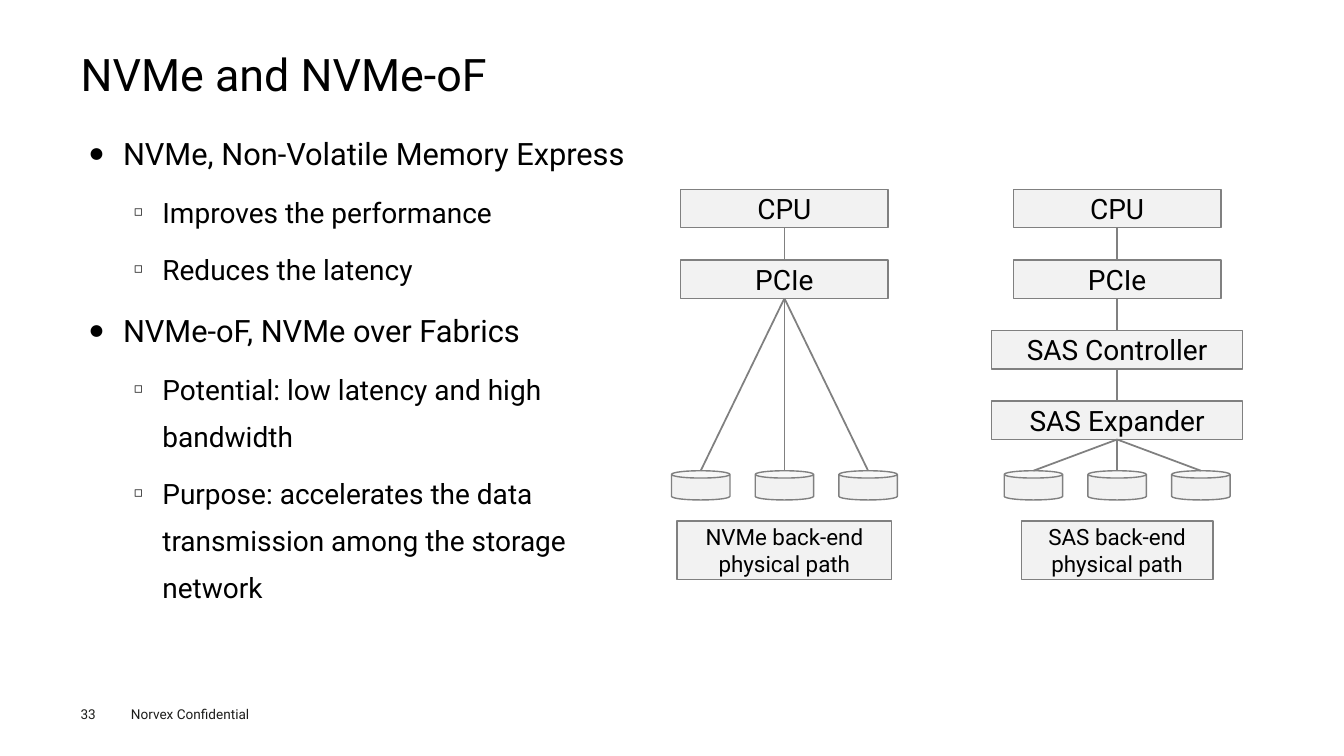
from dataclasses import dataclass

from lxml import etree
from pptx import Presentation
from pptx.dml.color import RGBColor
from pptx.enum import shapes, text
from pptx.oxml import ns
from pptx.util import Inches, Pt


@dataclass(frozen=True)
class Theme:
    font: str = "Roboto"
    ink: str = "000000"
    footer_ink: str = "1D1D1B"
    fill: str = "F2F2F2"
    outline: str = "808080"
    title: float = 32
    topic: float = 22
    detail: float = 20
    caption: float = 16
    footer: float = 9.7


THEME = Theme()
LAYER_TOP, LAYER_STEP, LAYER_HEIGHT = 1.88, 0.7, 0.38
DISK_TOP, DISK_WIDTH, DISK_HEIGHT, DISK_STEP = 4.67, 0.58, 0.29, 0.83
CAPTION_TOP, CAPTION_HEIGHT = 5.17, 0.58

# Per outline level: size, space before, left indent, hanging indent, bullet, alignment
LEVELS = [
    (THEME.topic, 7.9, 0.33, 0.33, "●", text.PP_ALIGN.JUSTIFY),
    (THEME.detail, 7.2, 0.72, 0.28, "◻", text.PP_ALIGN.LEFT),
]
OUTLINE = [
    (0, "NVMe, Non-Volatile Memory Express"),
    (1, "Improves the performance"),
    (1, "Reduces the latency"),
    (0, "NVMe-oF, NVMe over Fabrics"),
    (1, "Potential: low latency and high bandwidth"),
    (1, "Purpose: accelerates the data transmission among the storage network"),
]
# Per path: centre, layers as (name, width), caption, caption width
PATHS = [
    (7.78, [("CPU", 2.06), ("PCIe", 2.06)], "NVMe back-end physical path", 2.13),
    (11.08, [("CPU", 2.06), ("PCIe", 2.06), ("SAS Controller", 2.49), ("SAS Expander", 2.49)],
     "SAS back-end physical path", 1.9),
]


def apply(target, formats):
    for name, value in formats.items():
        setattr(target, name, value)


def write(para, words, size, color=THEME.ink):
    span = para.add_run()
    span.text = words
    apply(span.font, {"name": THEME.font, "size": Pt(size)})
    span.font.color.rgb = RGBColor.from_string(color)


def add_text_box(page, left, top, width, height, insets=(0, 0),
                 anchor=text.MSO_ANCHOR.TOP):
    box = page.shapes.add_textbox(*map(Inches, (left, top, width, height)))
    side, end = map(Inches, insets)
    apply(box.text_frame, {
        "word_wrap": True, "vertical_anchor": anchor,
        "margin_left": side, "margin_right": side,
        "margin_top": end, "margin_bottom": end,
    })
    return box.text_frame


def add_bullet(para, symbol, left, hanging):
    properties = para._p.get_or_add_pPr()
    properties.set("marL", str(Inches(left)))
    properties.set("indent", str(-Inches(hanging)))
    for tag, name, value in (("a:buSzPct", "val", "50000"),
                             ("a:buFont", "typeface", THEME.font),
                             ("a:buChar", "char", symbol)):
        etree.SubElement(properties, ns.qn(tag)).set(name, value)


def add_outline(page):
    frame = add_text_box(page, 0.8, 1.15, 5.92, 5.33, insets=(0.09, 0.04))
    for index, (level, words) in enumerate(OUTLINE):
        size, before, left, hanging, symbol, alignment = LEVELS[level]
        para = frame.add_paragraph() if index else frame.paragraphs[0]
        add_bullet(para, symbol, left, hanging)
        apply(para, {"level": level, "alignment": alignment, "line_spacing": 1.4})
        if index:
            para.space_before = Pt(before)
        write(para, words, size)


def add_part(page, kind, center, top, width, height):
    """Add a grey outlined shape centred on a vertical axis."""
    part = page.shapes.add_shape(
        kind, *map(Inches, (center - width / 2, top, width, height)))
    part.shadow.inherit = False
    part.fill.solid()
    part.fill.fore_color.rgb = RGBColor.from_string(THEME.fill)
    part.line.color.rgb = RGBColor.from_string(THEME.outline)
    part.line.width = Pt(1)
    return part


def add_label_box(page, words, size, center, top, width, height):
    part = add_part(page, shapes.MSO_SHAPE.RECTANGLE, center, top, width, height)
    apply(part.text_frame, {"word_wrap": True, "vertical_anchor": text.MSO_ANCHOR.MIDDLE})
    para = part.text_frame.paragraphs[0]
    para.alignment = text.PP_ALIGN.CENTER
    write(para, words, size)


def add_link(page, start_x, start_y, end_x, end_y):
    link = page.shapes.add_connector(
        shapes.MSO_CONNECTOR.STRAIGHT, *map(Inches, (start_x, start_y, end_x, end_y)))
    link.line.color.rgb = RGBColor.from_string(THEME.outline)
    link.line.width = Pt(1.25)
    etree.SubElement(link._element.spPr, ns.qn("a:effectLst"))


def add_storage_path(page, center, layers, caption, caption_width):
    """Stack the layers, then fan out from the lowest one to three disks."""
    bottom = None
    for index, (name, width) in enumerate(layers):
        top = LAYER_TOP + index * LAYER_STEP
        add_label_box(page, name, THEME.detail, center, top, width, LAYER_HEIGHT)
        if bottom is not None:
            add_link(page, center, bottom, center, top)
        bottom = top + LAYER_HEIGHT
    for offset in (-DISK_STEP, 0, DISK_STEP):
        add_part(page, shapes.MSO_SHAPE.CAN, center + offset, DISK_TOP,
                 DISK_WIDTH, DISK_HEIGHT)
        add_link(page, center, bottom, center + offset, DISK_TOP)
    add_label_box(page, caption, THEME.caption, center, CAPTION_TOP,
                  caption_width, CAPTION_HEIGHT)


def add_title(page):
    frame = add_text_box(page, 0.8, 0.49, 11.73, 0.54, anchor=text.MSO_ANCHOR.MIDDLE)
    frame.paragraphs[0].line_spacing = 0.9
    write(frame.paragraphs[0], "NVMe and NVMe-oF", THEME.title)


def add_footer(page):
    for words, place, insets in (
        ("33", (0.8, 7, 0.4, 0.16), (0, 0)),
        ("Norvex Confidential", (1.2, 6.95, 1.6, 0.27), (0.1, 0.05)),
    ):
        frame = add_text_box(page, *place, insets=insets)
        write(frame.paragraphs[0], words, THEME.footer, THEME.footer_ink)


def main():
    deck = Presentation()
    apply(deck, {"slide_width": Inches(13.33), "slide_height": Inches(7.5)})
    page = deck.slides.add_slide(deck.slide_layouts[6])
    add_title(page)
    add_outline(page)
    for path in PATHS:
        add_storage_path(page, *path)
    add_footer(page)
    deck.save("out.pptx")


if __name__ == "__main__":
    main()
